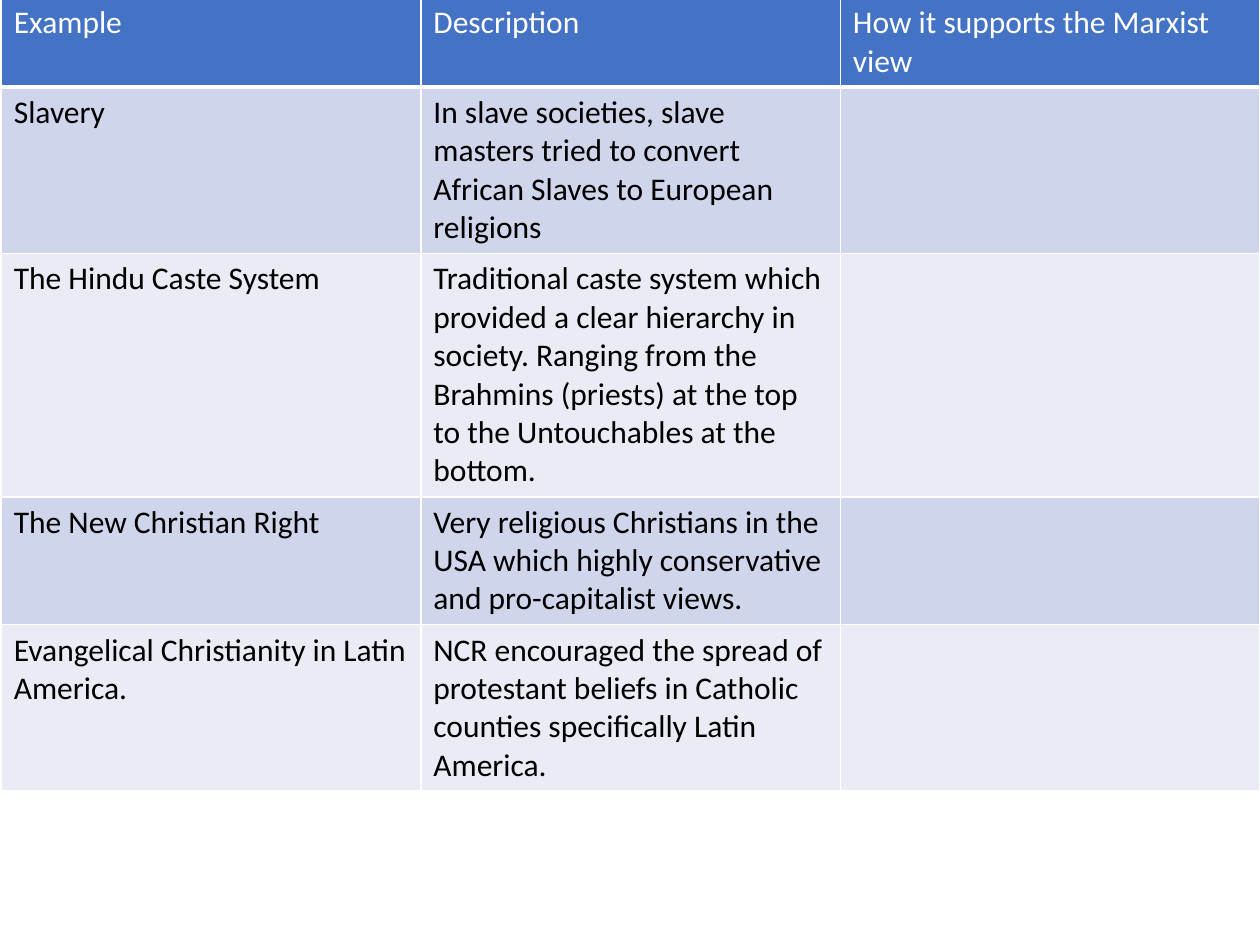
import dataclasses

import pptx
import pptx.dml.color
import pptx.oxml
import pptx.oxml.ns
import pptx.util

Inches = pptx.util.Inches
Pt = pptx.util.Pt
RGBColor = pptx.dml.color.RGBColor

HEADINGS = ("Example", "Description", "How it supports the Marxist view")
EXAMPLES = (
    ("Slavery",
     "In slave societies, slave masters tried to convert African Slaves to "
     "European religions", ""),
    ("The Hindu Caste System",
     "Traditional caste system which provided a clear hierarchy in society. "
     "Ranging from the Brahmins (priests) at the top to the Untouchables at "
     "the bottom.", ""),
    ("The New Christian Right",
     "Very religious Christians in the USA which highly conservative and "
     "pro-capitalist views.", ""),
    ("Evangelical Christianity in Latin America.",
     "NCR encouraged the spread of protestant beliefs in Catholic counties "
     "specifically Latin America.", ""),
)
LINES_PER_ROW = (2, 4, 6, 3, 4)


@dataclasses.dataclass(frozen=True)
class Theme:
    font: str = "Calibri"
    size: int = 18
    header_fill: str = "4472C4"
    header_text: str = "FFFFFF"
    body_text: str = "000000"
    bands: tuple = ("CFD5EA", "E9EBF5")
    border: str = "FFFFFF"
    border_width: int = 1
    header_rule_width: int = 3
    line_height: float = 0.3
    cell_padding: float = 0.1


class SlideBuilder:
    def __init__(self, slide, theme):
        self.slide = slide
        self.theme = theme

    def table(self, rows, lines_per_row, left, top, width):
        """Add a banded table whose row heights follow their line counts."""
        theme = self.theme
        heights = [Inches(theme.cell_padding + theme.line_height * lines)
                   for lines in lines_per_row]
        table = self.slide.shapes.add_table(
            len(rows), len(rows[0]), left, top, width, sum(heights)).table
        for row_index, texts in enumerate(rows):
            table.rows[row_index].height = heights[row_index]
            is_header = row_index == 0
            if is_header:
                fill, color = theme.header_fill, theme.header_text
                rule_width = theme.header_rule_width
            else:
                fill = theme.bands[(row_index - 1) % len(theme.bands)]
                color, rule_width = theme.body_text, theme.border_width
            for column_index, text in enumerate(texts):
                cell = table.cell(row_index, column_index)
                self.cell(cell, text, fill, color)
                self.borders(cell, rule_width)

    def cell(self, cell, text, fill, color):
        cell.fill.solid()
        cell.fill.fore_color.rgb = RGBColor.from_string(fill)
        cell.text = text
        font = cell.text_frame.paragraphs[0].font
        font.name = self.theme.font
        font.size = Pt(self.theme.size)
        font.bold = False
        font.color.rgb = RGBColor.from_string(color)

    def borders(self, cell, bottom_width):
        """Line all four sides; the schema wants borders before the fill."""
        properties = cell._tc.get_or_add_tcPr()
        side_width = self.theme.border_width
        widths = {"lnL": side_width, "lnR": side_width,
                  "lnT": side_width, "lnB": bottom_width}
        for position, (side, width) in enumerate(widths.items()):
            properties.insert(position, pptx.oxml.parse_xml(
                f'<a:{side} {pptx.oxml.ns.nsdecls("a")} w="{Pt(width)}">'
                f'<a:solidFill><a:srgbClr val="{self.theme.border}"/>'
                f'</a:solidFill></a:{side}>'))


def main():
    presentation = pptx.Presentation()
    presentation.slide_width = Inches(10)
    presentation.slide_height = Inches(7.5)
    blank_layout = presentation.slide_layouts[6]
    builder = SlideBuilder(presentation.slides.add_slide(blank_layout), Theme())
    builder.table((HEADINGS, *EXAMPLES), LINES_PER_ROW,
                  Inches(0.01), Inches(-0.02), Inches(9.99))
    presentation.save("out.pptx")


if __name__ == "__main__":
    main()
